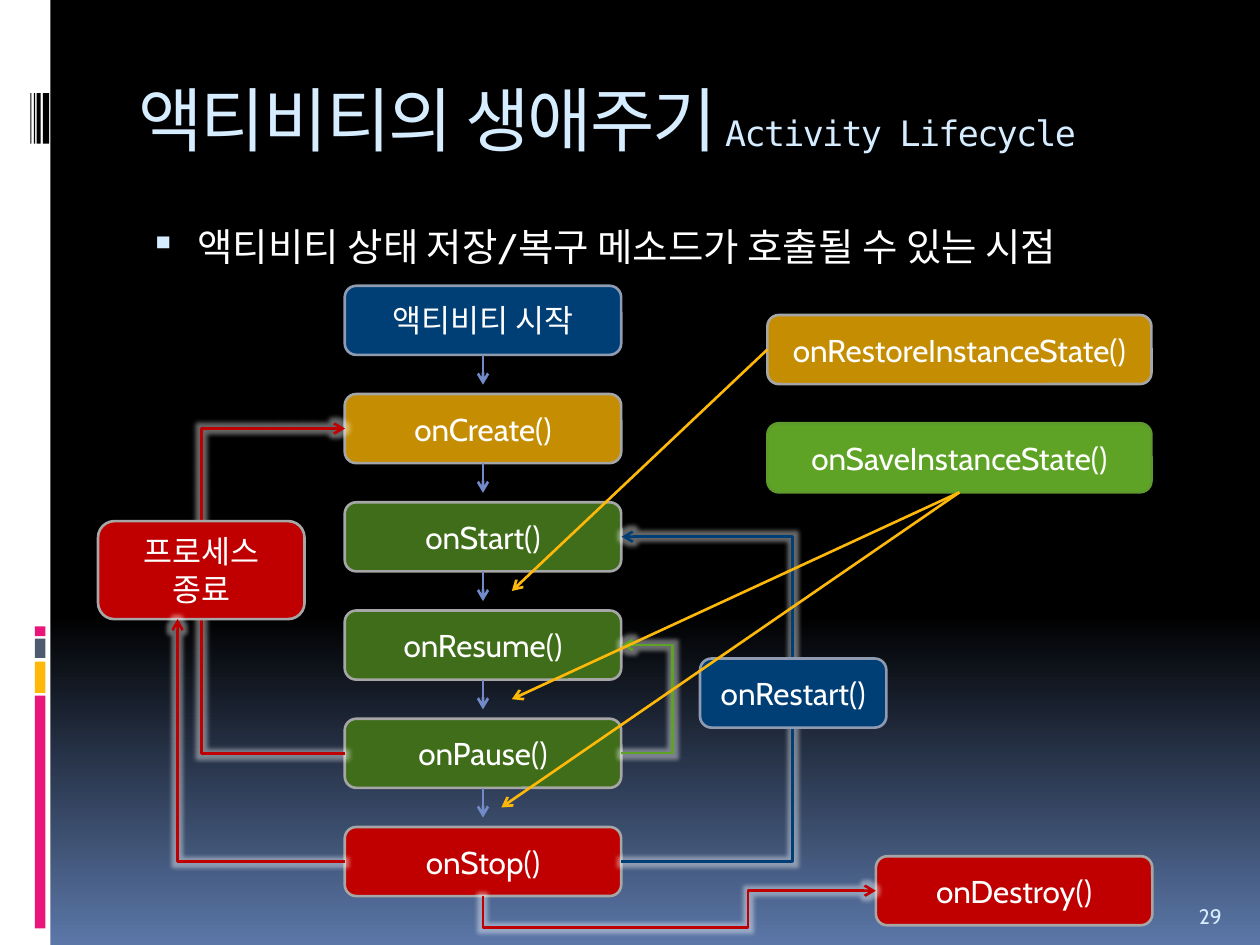
from lxml.etree import SubElement
from pptx import Presentation
from pptx.dml.color import RGBColor
from pptx.enum.shapes import MSO_CONNECTOR, MSO_SHAPE
from pptx.enum.text import MSO_ANCHOR, PP_ALIGN
from pptx.oxml import parse_xml
from pptx.oxml.ns import nsdecls, qn
from pptx.util import Pt

COLORS = {
    "white": "FFFFFF", "black": "000000", "ice": "D6ECFF", "sky": "5B77A8",
    "pink": "EA157A", "amber": "FEB80A", "slate": "4E5B6F", "navy": "003F75",
    "steel": "8E9BB0", "gold": "C58D01", "gray": "A6A6A6", "forest": "3F6D19",
    "green": "5FA326", "leaf": "5E9B2C", "red": "C00000", "violet": "738AC8",
}
BOX_W, BOX_H, PITCH = 158, 39.5, 61.85
STAGES = [("액티비티 시작", "navy", "steel"), ("onCreate()", "gold", "gray"),
          ("onStart()", "forest", "gray"), ("onResume()", "forest", "gray"),
          ("onPause()", "forest", "gray"), ("onStop()", "red", "gray")]


def rgb(name):
    """Return the named colour."""
    return RGBColor.from_string(COLORS[name])


def add_run(p, text, size, color="white", font="Cabin"):
    """Append a formatted run to a paragraph."""
    r = p.add_run()
    r.text = text
    for key, value in {"name": font, "size": Pt(size)}.items():
        setattr(r.font, key, value)
    r.font.color.rgb = rgb(color)
    return r


def add_text(slide, x, y, w, h, anchor=MSO_ANCHOR.TOP):
    """Add a wrapping text box and return its first paragraph."""
    tf = slide.shapes.add_textbox(Pt(x), Pt(y), Pt(w), Pt(h)).text_frame
    for key, value in {"word_wrap": True, "vertical_anchor": anchor}.items():
        setattr(tf, key, value)
    return tf.paragraphs[0]


def add_block(slide, x, y, w, h, fill, kind=MSO_SHAPE.RECTANGLE):
    """Add a filled shape without outline or shadow."""
    sp = slide.shapes.add_shape(kind, Pt(x), Pt(y), Pt(w), Pt(h))
    sp.shadow.inherit = False
    sp.fill.solid()
    sp.fill.fore_color.rgb = rgb(fill)
    sp.line.fill.background()
    return sp


def add_box(slide, x, y, text, fill, line="gray", w=BOX_W, h=BOX_H):
    """Add a rounded box with one centred paragraph per text line."""
    sp = add_block(slide, x, y, w, h, fill, MSO_SHAPE.ROUNDED_RECTANGLE)
    sp.line.color.rgb = rgb(line)
    sp.line.width = Pt(1.5)
    tf = sp.text_frame
    margins = dict.fromkeys(("margin_left", "margin_right"), Pt(2))
    for key, value in {"word_wrap": True, "vertical_anchor": MSO_ANCHOR.MIDDLE, **margins}.items():
        setattr(tf, key, value)
    for i, line_text in enumerate(text.split("\n")):
        p = tf.add_paragraph() if i else tf.paragraphs[0]
        p.alignment = PP_ALIGN.CENTER
        add_run(p, line_text, 18)


def add_arrow(slide, start, end, color, bend=None, adjust=(), arrow="tailEnd"):
    """Add an arrow, bent and glowing when a bent preset is named."""
    kind = MSO_CONNECTOR.ELBOW if bend else MSO_CONNECTOR.STRAIGHT
    sp = slide.shapes.add_connector(kind, *(Pt(v) for v in (*start, *end)))
    sp.line.color.rgb = rgb(color)
    sp.line.width = Pt(1.5)
    SubElement(sp.line._get_or_add_ln(), qn(f"a:{arrow}"), type="arrow")
    sp_pr = sp._element.spPr
    effects = SubElement(sp_pr, qn("a:effectLst"))
    if bend:
        geom = sp_pr.find(qn("a:prstGeom"))
        geom.set("prst", bend)
        guides = geom.get_or_add_avLst()
        for i, value in enumerate(adjust, 1):
            SubElement(guides, qn("a:gd"), name=f"adj{i}", fmla=f"val {round(value * 100000)}")
        effects.append(parse_xml(
            f'<a:glow {nsdecls("a")} rad="{Pt(5)}"><a:srgbClr val="{COLORS["white"]}">'
            '<a:alpha val="40000"/></a:srgbClr></a:glow>'))


def add_background(slide):
    """Fill the background from black down to blue."""
    fill = slide.background.fill
    fill.gradient()
    fill.gradient_angle = 270
    for stop, (position, color) in zip(fill.gradient_stops, ((0.65, "black"), (1, "sky"))):
        stop.position = position
        stop.color.rgb = rgb(color)


def add_sidebar(slide, x, y, w, h):
    """Draw the white strip with its colour bars and black stripes."""
    add_block(slide, x, y, w, h, "white")
    for top, height, color in ((397.5, 133, "pink"), (378, 18, "amber"),
                               (365, 11, "slate"), (358, 5.5, "pink")):
        add_block(slide, x + 20, y + top, 6, height, color)
    for left, width in ((24.5, 3.6), (21, 2.2), (19.4, 0.7), (17.3, 0.7)):
        add_block(slide, x + left, y + 53.3, width, 28.8, "black")


def add_heading(slide, x, y, w, h):
    """Write the title and the bullet line below it."""
    p = add_text(slide, x, y, w, 72)
    for text, size in (("액티비티의 생애주기", 40), (" Activity Lifecycle", 20)):
        r = add_run(p, text, size, "ice", "DejaVu Sans Mono")
        r.font._element.set("spc", "-100")
    p = add_text(slide, x + 1.5, y + h - 34, w, 34)
    p.space_before = Pt(7)
    add_run(p, "액티비티 상태 저장/복구 메소드가 호출될 수 있는 시점", 22)
    p_pr = p._p.get_or_add_pPr()
    for key, value in {"marL": Pt(32.4), "indent": Pt(-27.4)}.items():
        p_pr.set(key, str(value))
    color = SubElement(p_pr, qn("a:buClr"))
    SubElement(color, qn("a:srgbClr"), val=COLORS["ice"])
    SubElement(p_pr, qn("a:buSzPct"), val="95000")
    SubElement(p_pr, qn("a:buChar"), char="▪")


def add_stages(slide, x, y):
    """Stack the life cycle stages with arrows between them."""
    for i, (text, fill, line) in enumerate(STAGES):
        top = y + i * PITCH
        add_box(slide, x, top, text, fill, line)
        if i:
            middle = x + BOX_W / 2
            gap_top = top - PITCH + BOX_H
            add_arrow(slide, (middle, gap_top), (middle, gap_top + 17), "violet")


def add_returns(slide, x, y):
    """Add the bent paths around the stages and the boxes on them."""
    right = x + BOX_W
    mids = [y + i * PITCH + BOX_H / 2 for i in range(len(STAGES))]
    step = 0.2
    for edge, first, last, reach, color in ((right, 4, 3, 29.5, "green"),
                                            (x, 4, 1, -82.5, "red"),
                                            (right, 5, 2, 98.5, "navy")):
        add_arrow(slide, (edge, mids[first]), (edge + step, mids[last]), color,
                  "bentConnector3", (reach / step,))
    add_box(slide, x - 141, y + 134.5, "프로세스\n종료", "red", w=118, h=56)
    add_arrow(slide, (x, mids[5]), (x - 95.5, y + 190.5), "red", "bentConnector2")
    add_box(slide, x + 203, y + 213, "onRestart()", "navy", "steel", w=106.5)
    left, middle = x + 303.5, x + BOX_W / 2
    top, bottom = y + 345.7, y + 5 * PITCH + BOX_H
    add_box(slide, left, top - BOX_H / 2, "onDestroy()", "red")
    adjust = (73 / (left - middle), 20.8 / (bottom - top))
    add_arrow(slide, (left, top), (middle, bottom), "red", "bentConnector4", adjust, "headEnd")


def add_state_calls(slide, x, y, w):
    """Add the two state methods and point to when they are called."""
    add_box(slide, x, y, "onRestoreInstanceState()", "gold", w=w)
    add_box(slide, x, y + PITCH, "onSaveInstanceState()", "green", "leaf", w=w)
    restore = (x, y + BOX_H / 2)
    save = (x + w / 2, y + PITCH + BOX_H)
    for i, (start, left) in enumerate(((restore, -146), (save, -146), (save, -152))):
        add_arrow(slide, start, (x + left, y + 157.7 + i * PITCH), "amber")


def main():
    """Build and save the slide."""
    prs = Presentation()
    prs.slide_width, prs.slide_height = Pt(720), Pt(540)
    slide = prs.slides.add_slide(prs.slide_layouts[6])
    add_background(slide)
    add_sidebar(slide, 0, 0, 28.8, 540)
    add_heading(slide, 72, 40, 612, 118)
    add_stages(slide, 197, 163.3)
    add_returns(slide, 197, 163.3)
    add_state_calls(slide, 438.5, 180, 219.5)
    p = add_text(slide, 678, 505.5, 36, 28.8, MSO_ANCHOR.BOTTOM)
    add_run(p, "29", 12, "ice")
    prs.save("out.pptx")


if __name__ == "__main__":
    main()
